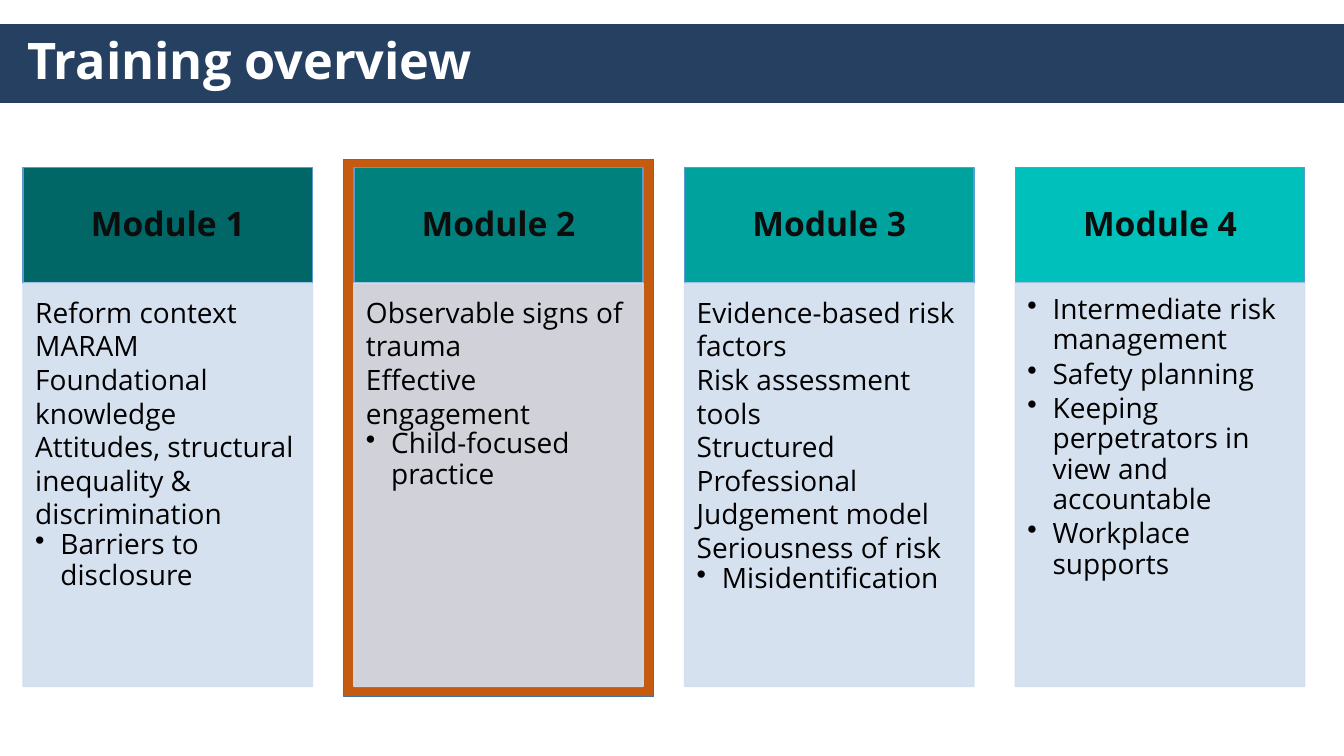
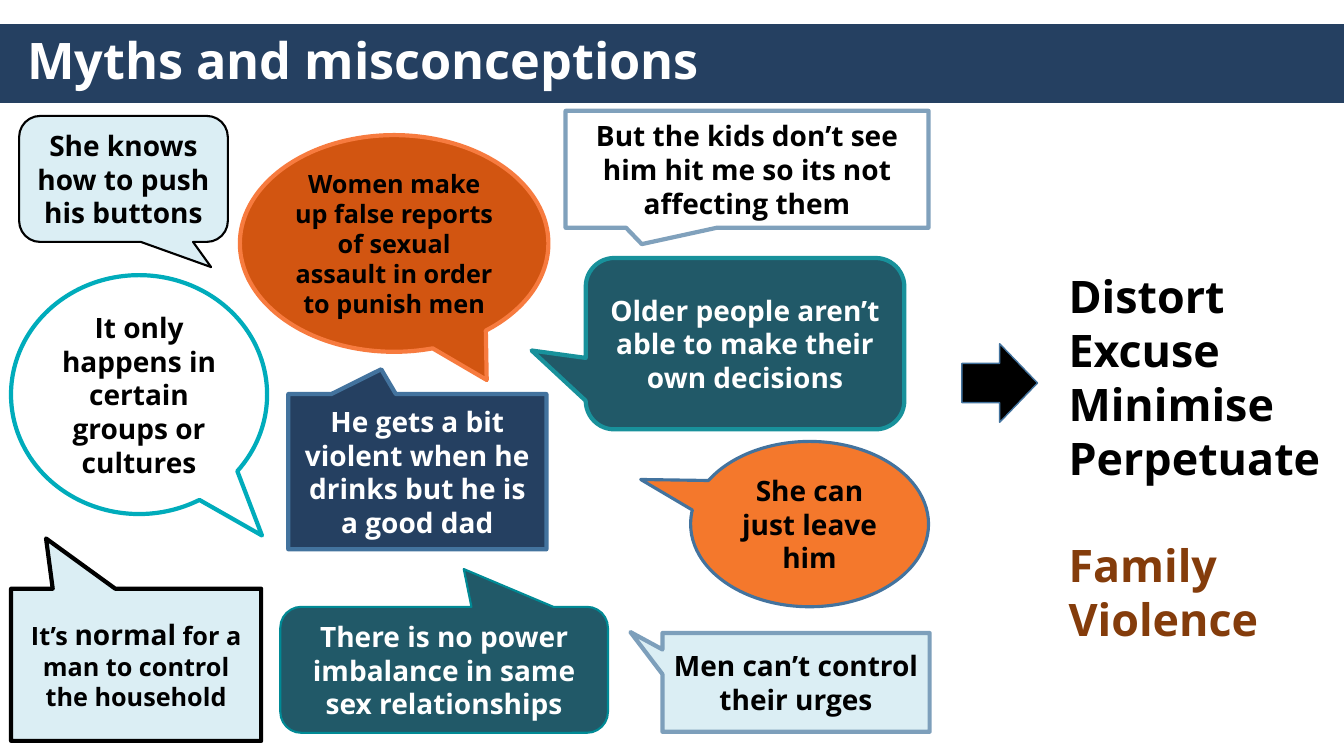
import pptx
import pptx.util
import pptx.dml.color
import pptx.enum.shapes
import pptx.enum.text
import pptx.oxml

Inch, Pt = pptx.util.Inches, pptx.util.Pt
Kind = pptx.enum.shapes.MSO_SHAPE
Align = pptx.enum.text.PP_ALIGN
Anchor = pptx.enum.text.MSO_ANCHOR

WIDE, HIGH = 13.33, 7.5
FONT = "Open Sans"
NAVY, TEAL, PALE = "254061", "215968", "DBEEF4"
BLACK, WHITE, EDGE = "000000", "FFFFFF", "43739E"
INK, BROWN, RUST = "0D0D0D", "843C0B", "C55A11"
CARD, RIM = "D2DEEF", "5B9BD5"

# heading, heading fill, plain lines, bulleted lines
MODULES = [
    ("Module 1", "006666",
     ["Reform context", "MARAM", "Foundational knowledge",
      "Attitudes, structural inequality & discrimination"],
     ["Barriers to disclosure"]),
    ("Module 2", "00817E",
     ["Observable signs of trauma", "Effective engagement"],
     ["Child-focused practice"]),
    ("Module 3", "00A29E",
     ["Evidence-based risk factors", "Risk assessment tools",
      "Structured Professional Judgement model", "Seriousness of risk"],
     ["Misidentification"]),
    ("Module 4", "00C0BB", [],
     ["Intermediate risk management", "Safety planning",
      "Keeping perpetrators in view and accountable",
      "Workplace supports"]),
]
CURRENT = 1
LEFT, TOP, PITCH = 0.23, 1.66, 3.28
COL, HEAD, BODY, FRAME = 2.87, 1.15, 4, 0.1

OVAL = Kind.OVAL_CALLOUT
RECT = Kind.RECTANGULAR_CALLOUT
ROUND = Kind.ROUNDED_RECTANGULAR_CALLOUT

# text (larger words between stars), kind, box, tail, fill, line, width, ink, size
MYTHS = [
    ("Women make up false reports of sexual assault in order to punish men",
     OVAL, (2.38, 1.34, 3.06, 2.15), (0.3, 0.63), "D25511", "F77B3F", 3, BLACK, 18),
    ("He gets a bit violent when he drinks but he is a good dad",
     RECT, (2.86, 3.91, 2.56, 1.54), (-0.14, -0.66), NAVY, EDGE, 3, WHITE, 20),
    ("It only happens in certain groups or cultures",
     OVAL, (0.11, 2.73, 2.54, 2.37), (0.48, 0.59), WHITE, "00ACBB", 3, BLACK, 20),
    ("It’s *normal* for a man to control the household",
     RECT, (0.11, 5.84, 2.48, 1.51), (-0.36, -0.83), PALE, BLACK, 3, BLACK, 18),
    ("She knows how to push\nhis buttons",
     ROUND, (0.19, 1.15, 2.07, 1.25), (0.42, 0.7), PALE, BLACK, 1.5, BLACK, 20),
    ("There is no power imbalance in same sex relationships",
     ROUND, (2.78, 6.02, 3.25, 1.25), (0.06, -0.8), TEAL, "008A95", 1.5, WHITE, 20),
    ("But the kids don’t see him hit me so its not affecting them",
     RECT, (5.61, 1.1, 3.6, 1.16), (-0.29, 0.64), WHITE, "80A1BC", 3, BLACK, 20),
    ("Older people aren’t able to make their own decisions",
     ROUND, (5.81, 2.56, 3.16, 1.7), (-0.67, 0.04), TEAL, "18919B", 3, WHITE, 20),
    ("Men can’t control their urges",
     RECT, (6.57, 6.28, 2.65, 0.98), (-0.62, -0.51), PALE, "7D9FBB", 3, BLACK, 20),
    ("She can just leave him",
     OVAL, (6.85, 4.38, 2.36, 1.64), (-0.71, -0.27), "F4782C", EDGE, 2.25, BLACK, 20),
]
EFFECTS = ["Distort", "Excuse", "Minimise", "Perpetuate"]
RESULT = "Family Violence"


def color(code):
    return pptx.dml.color.RGBColor.from_string(code)


def style(run, size, ink, bold=True):
    run.font.name, run.font.size, run.font.bold = FONT, Pt(size), bold
    run.font.color.rgb = color(ink)


def draw(slide, kind, box, fill, line, width=1):
    shape = slide.shapes.add_shape(kind, *map(Inch, box))
    shape.shadow.inherit = False
    shape.fill.solid()
    shape.fill.fore_color.rgb = color(fill)
    shape.line.color.rgb = color(line)
    shape.line.width = Pt(width)
    return shape


def fade(shape, share):
    """Make the fill and line partly transparent."""
    for node in shape.fill._xPr.xpath(".//a:srgbClr"):
        alpha = pptx.oxml.parse_xml(
            '<a:alpha xmlns:a="http://schemas.openxmlformats.org/drawingml/2006/main"'
            f' val="{share * 1000}"/>')
        node.append(alpha)


def write(shape, text, size, ink, align=Align.CENTER, anchor=Anchor.MIDDLE):
    """Fill the shape with text; words between stars are 2 pt larger."""
    frame = shape.text_frame
    frame.word_wrap, frame.vertical_anchor = True, anchor
    frame.text = text.replace("*", "")
    for para, words in zip(frame.paragraphs, text.split("\n")):
        para.alignment = align
        para.text = ""
        for i, part in enumerate(words.split("*")):
            run = para.add_run()
            run.text = part
            style(run, size + i % 2 * 2, ink)
    return frame


def bullet(para):
    para.line_spacing, para.space_after = 0.9, Pt(3)
    props = para._p.get_or_add_pPr()
    props.set("marL", str(Inch(0.25)))
    props.set("indent", str(-Inch(0.25)))
    props.append(pptx.oxml.parse_xml(
        '<a:buChar xmlns:a="http://schemas.openxmlformats.org/drawingml/2006/main"'
        ' char="•"/>'))


def start(deck):
    return deck.slides.add_slide(deck.slide_layouts[6])


def title(slide, text):
    draw(slide, Kind.RECTANGLE, (0, 0.25, WIDE, 0.77), NAVY, NAVY)
    box = slide.shapes.add_textbox(*map(Inch, (0.17, 0.25, 11.5, 0.75)))
    frame = write(box, text, 36, WHITE, Align.LEFT)
    frame.paragraphs[0].line_spacing = 0.9


def module(slide, left, name, fill, plain, points):
    head = draw(slide, Kind.RECTANGLE, (left, TOP, COL, HEAD), fill, RIM)
    write(head, name, 24, INK).paragraphs[0].line_spacing = 0.9
    body = draw(slide, Kind.RECTANGLE, (left, TOP + HEAD, COL, BODY), CARD, CARD)
    fade(body, 90)
    frame = write(body, "\n".join(plain + points), 20, BLACK, Align.LEFT, Anchor.TOP)
    frame.margin_left = frame.margin_top = Inch(0.12)
    frame.margin_right, frame.margin_bottom = Inch(0.16), Inch(0.17)
    for i, para in enumerate(frame.paragraphs):
        para.runs[0].font.bold = False
        if i >= len(plain):
            bullet(para)


def overview(deck):
    slide = start(deck)
    draw(slide, Kind.RECTANGLE,
         (LEFT + CURRENT * PITCH - FRAME, TOP - FRAME + 0.02,
          COL + 2 * FRAME, HEAD + BODY + 2 * FRAME - 0.02), RUST, EDGE)
    for i, item in enumerate(MODULES):
        module(slide, LEFT + i * PITCH, *item)
    title(slide, "Training overview")


def myths(deck):
    slide = start(deck)
    title(slide, "Myths and misconceptions")
    box = slide.shapes.add_textbox(*map(Inch, (10.5, 2.62, 2.76, 3.87)))
    frame = write(box, "\n".join(EFFECTS + [RESULT]), 32, BLACK, Align.LEFT, Anchor.TOP)
    last = frame.paragraphs[-1]
    last.space_before = Pt(38.4)
    last.runs[0].font.color.rgb = color(BROWN)
    draw(slide, Kind.RIGHT_ARROW, (9.54, 3.41, 0.75, 0.78), BLACK, EDGE)
    for text, kind, place, tail, fill, line, width, ink, size in MYTHS:
        shape = draw(slide, kind, place, fill, line, width)
        shape.adjustments[0], shape.adjustments[1] = tail
        write(shape, text, size, ink)


def main():
    deck = pptx.Presentation()
    deck.slide_width, deck.slide_height = Inch(WIDE), Inch(HIGH)
    overview(deck)
    myths(deck)
    deck.save("out.pptx")


if __name__ == "__main__":
    main()
